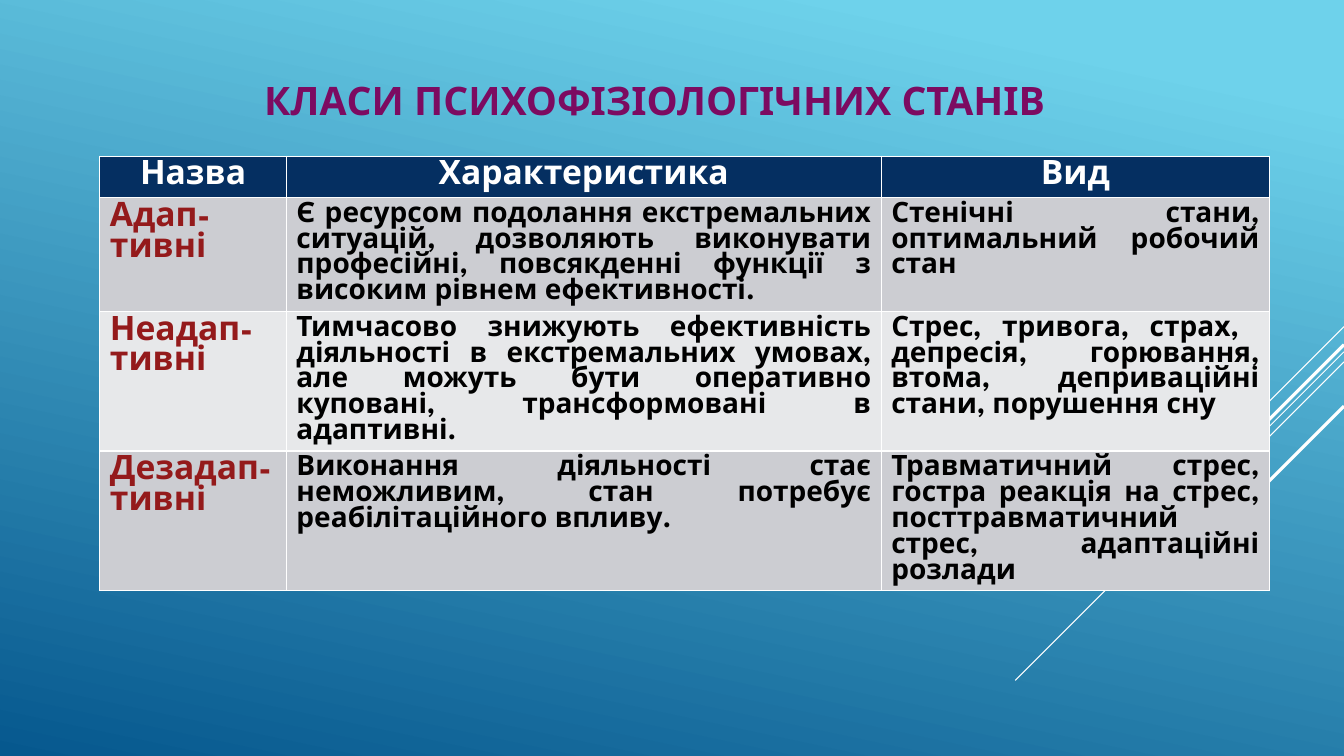
from lxml.etree import SubElement
from pptx import Presentation
from pptx.dml.color import RGBColor
from pptx.enum.shapes import MSO_CONNECTOR as Connector
from pptx.enum.text import MSO_ANCHOR as Anchor, PP_ALIGN as Align
from pptx.oxml.ns import qn
from pptx.util import Inches, Pt

SKY = RGBColor(0x6E, 0xD2, 0xEB)
DEEP_BLUE = RGBColor(0x06, 0x58, 0x8E)
WHITE = RGBColor(0xFF, 0xFF, 0xFF)
BLACK = RGBColor(0x00, 0x00, 0x00)
PLUM = RGBColor(0x7C, 0x0B, 0x61)
NAVY = RGBColor(0x05, 0x2F, 0x61)
BRICK = RGBColor(0x94, 0x1A, 0x1B)
BANDS = [RGBColor(0xCC, 0xCD, 0xD2), RGBColor(0xE7, 0xE8, 0xEA)]

BASE_FONT = {"name": "League Spartan", "bold": True}
TITLE_FONT = BASE_FONT | {"size": Pt(28)}
LABEL_FONT = BASE_FONT | {"size": Pt(24)}
DETAIL_FONT = BASE_FONT | {"size": Pt(20)}

SLIDE_WIDTH = 13.33
RAYS = [(3.24, 1.0, 0.75), (3.49, 3.26, 0.75), (3.59, 2.07, 0.75),
        (3.42, 1.91, 2.25), (4.03, 1.39, 2.25)]

COLUMN_WIDTHS = [1.85, 5.9, 3.85]
ROW_HEIGHTS = [0.41, 1.13, 1.38, 1.38]
STATES = [
    ("Назва", "Характеристика", "Вид"),
    ("Адап-тивні",
     "Є ресурсом подолання екстремальних ситуацій, дозволяють виконувати "
     "професійні, повсякденні функції з високим рівнем ефективності.",
     "Стенічні стани, оптимальний робочий стан"),
    ("Неадап-тивні",
     "Тимчасово знижують ефективність діяльності в екстремальних умовах, "
     "але можуть бути оперативно куповані, трансформовані в адаптивні.",
     "Стрес, тривога, страх,  депресія, горювання, втома, "
     "деприваційні стани, порушення сну "),
    ("Дезадап-тивні",
     "Виконання діяльності стає неможливим, стан потребує "
     "реабілітаційного впливу.",
     "Травматичний стрес, гостра реакція на стрес, посттравматичний стрес, "
     "адаптаційні розлади"),
]


def apply_format(target, values):
    for attribute, value in values.items():
        setattr(target, attribute, value)


def write_text(frame, wording, font, color, align):
    paragraph = frame.paragraphs[0]
    paragraph.alignment = align
    run = paragraph.add_run()
    run.text = wording
    apply_format(run.font, font)
    run.font.color.rgb = color


def paint_background(slide):
    fill = slide.background.fill
    fill.gradient()
    fill.gradient_angle = 258
    stops = [(0.1, SKY), (1.0, DEEP_BLUE)]
    for stop, (position, color) in zip(fill.gradient_stops, stops):
        stop.position = position
        stop.color.rgb = color


def add_ray(slide, top, reach, weight):
    ray = slide.shapes.add_connector(
        Connector.STRAIGHT, Inches(SLIDE_WIDTH), Inches(top),
        Inches(SLIDE_WIDTH - reach), Inches(top + reach))
    ray.line.color.rgb = WHITE
    ray.line.width = Pt(weight)
    SubElement(ray._element.spPr, qn("a:effectLst"))


def place_title(slide, wording):
    title = slide.shapes.title
    apply_format(title, {"left": Inches(1.88), "top": Inches(0.55),
                         "width": Inches(9.33), "height": Inches(0.88)})
    title.text_frame.vertical_anchor = Anchor.MIDDLE
    write_text(title.text_frame, wording, TITLE_FONT, PLUM, Align.CENTER)


def cell_style(row, column):
    if row == 0:
        return NAVY, LABEL_FONT, WHITE, Align.CENTER
    band = BANDS[(row - 1) % 2]
    if column == 0:
        return band, LABEL_FONT, BRICK, Align.JUSTIFY
    return band, DETAIL_FONT, BLACK, Align.JUSTIFY


def add_states_table(slide):
    table = slide.shapes.add_table(
        len(STATES), len(COLUMN_WIDTHS), Inches(0.99), Inches(1.55),
        Inches(sum(COLUMN_WIDTHS)), Inches(sum(ROW_HEIGHTS))).table
    for column, width in zip(table.columns, COLUMN_WIDTHS):
        column.width = Inches(width)
    for row, height in zip(table.rows, ROW_HEIGHTS):
        row.height = Inches(height)
    for r, state in enumerate(STATES):
        for c, wording in enumerate(state):
            background, font, color, align = cell_style(r, c)
            cell = table.cell(r, c)
            cell.fill.solid()
            cell.fill.fore_color.rgb = background
            write_text(cell.text_frame, wording, font, color, align)


def main():
    deck = Presentation()
    deck.slide_width = Inches(SLIDE_WIDTH)
    deck.slide_height = Inches(7.5)
    slide = deck.slides.add_slide(deck.slide_layouts[5])
    paint_background(slide)
    for ray in RAYS:
        add_ray(slide, *ray)
    place_title(slide, "КЛАСИ ПСИХОФІЗІОЛОГІЧНИХ СТАНІВ ")
    add_states_table(slide)
    deck.save("out.pptx")


if __name__ == "__main__":
    main()
